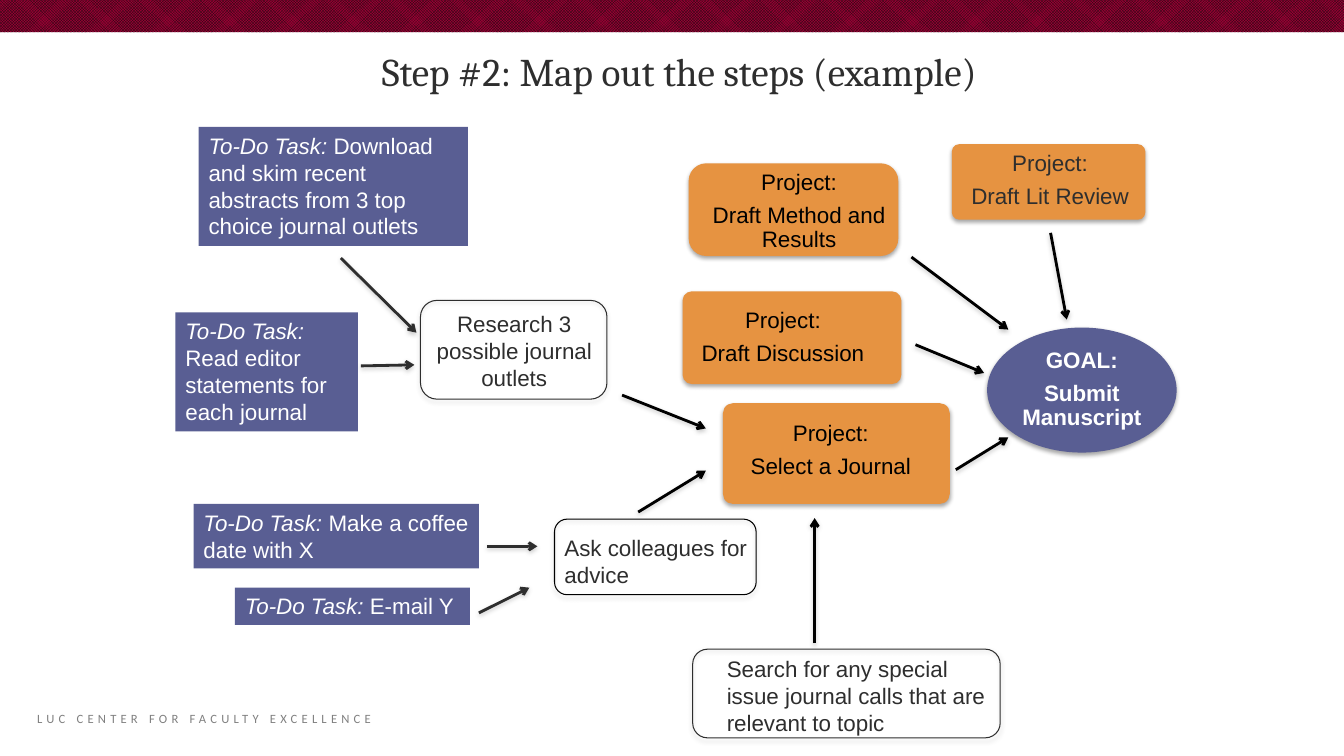
import pptx
import pptx.util
import pptx.dml.color
import pptx.enum.dml
import pptx.enum.shapes
import pptx.enum.text
import pptx.oxml
import pptx.oxml.ns

Inches, Pt = pptx.util.Inches, pptx.util.Pt
SHAPE = pptx.enum.shapes.MSO_SHAPE
ALIGN = pptx.enum.text.PP_ALIGN
ANCHOR = pptx.enum.text.MSO_ANCHOR

COLORS = {
    "ink": "2E2E2E", "black": "000000", "white": "FFFFFF", "gray": "808080",
    "project": "E69341", "task": "595E93", "check": "0D0D0D", "band": "990033",
}
CENTERED = {"alignment": ALIGN.CENTER}
STACKED = {"alignment": ALIGN.CENTER, "line_spacing": 0.9, "space_after": Pt(6.3)}


def rgb(name):
    return pptx.dml.color.RGBColor.from_string(COLORS[name])


def assign(target, values):
    for attribute, value in values.items():
        setattr(target, attribute, value)


class StepMap:
    """Draws the parts of a step map on one slide."""

    def __init__(self, slide):
        self.shapes = slide.shapes
        self.font = {"name": "Arial", "size": Pt(16)}

    def fill_text(self, frame, paragraphs, color, layout=None, font=None, inset=None,
                  anchor=ANCHOR.TOP):
        """Fill a frame; each paragraph is a list of (text, italic) runs."""
        assign(frame, {"word_wrap": True, "vertical_anchor": anchor})
        if inset is not None:
            sides = ("left", "top", "right", "bottom")
            assign(frame, {f"margin_{side}": Inches(inset) for side in sides})
        for index, runs in enumerate(paragraphs):
            paragraph = frame.add_paragraph() if index else frame.paragraphs[0]
            assign(paragraph, {"alignment": ALIGN.LEFT, **(layout or {})})
            for text, italic in runs:
                run = paragraph.add_run()
                run.text = text
                assign(run.font, {**self.font, "italic": italic, **(font or {})})
                run.font.color.rgb = rgb(color)

    def shadow(self, properties, color, alpha, distance):
        """Add a soft downward shadow; alpha in percent, distance in points."""
        effects = properties.find(pptx.oxml.ns.qn("a:effectLst"))
        if effects is not None:
            properties.remove(effects)
        properties.append(pptx.oxml.parse_xml(
            f'<a:effectLst {pptx.oxml.ns.nsdecls("a")}>'
            f'<a:outerShdw blurRad="{Pt(3.1)}" dist="{Pt(distance)}" dir="5400000" rotWithShape="0">'
            f'<a:srgbClr val="{COLORS[color]}"><a:alpha val="{alpha * 1000}"/></a:srgbClr>'
            '</a:outerShdw></a:effectLst>'))

    def shape(self, kind, place, fill=None, line=None, corner=None, shadow=None):
        shape = self.shapes.add_shape(kind, *map(Inches, place))
        shape.shadow.inherit = False
        if corner is not None:
            shape.adjustments[0] = corner
        if fill:
            shape.fill.solid()
            shape.fill.fore_color.rgb = rgb(fill)
        else:
            shape.fill.background()
        if line:
            shape.line.color.rgb = rgb(line)
            shape.line.width = Pt(0.75)
        else:
            shape.line.fill.background()
        if shadow:
            self.shadow(shape._element.spPr, shadow, 35, 1.8)
        return shape

    def text(self, place, paragraphs, color, **style):
        box = self.shapes.add_textbox(*map(Inches, place))
        self.fill_text(box.text_frame, paragraphs, color, **style)
        return box

    def project(self, place, label_place, title, color="black", corner=0.1):
        self.shape(SHAPE.ROUNDED_RECTANGLE, place, "project", corner=corner, shadow="black")
        self.text(label_place, [[("Project:", False)], [(title, False)]], color,
                  layout=STACKED, inset=0.03, anchor=ANCHOR.MIDDLE)

    def goal(self, place, lines):
        ellipse = self.shape(SHAPE.OVAL, place, "task", shadow="black")
        self.fill_text(ellipse.text_frame, [[(line, False)] for line in lines], "white",
                       layout=STACKED, font={"bold": True}, inset=0.01, anchor=ANCHOR.MIDDLE)

    def step(self, place, label_place, label, line="ink", layout=None):
        self.text(label_place, [[(label, False)]], "ink", layout=layout)
        self.shape(SHAPE.ROUNDED_RECTANGLE, place, line=line, corner=0.167, shadow="gray")

    def task(self, place, label):
        box = self.shape(SHAPE.RECTANGLE, place, "task")
        self.fill_text(box.text_frame, [[("To-Do Task: ", True), (label, False)]], "white")

    def arrow(self, start, end, color):
        arrow = self.shapes.add_connector(
            pptx.enum.shapes.MSO_CONNECTOR.STRAIGHT, *map(Inches, (*start, *end)))
        arrow.line.color.rgb = rgb(color)
        arrow.line.width = Pt(2)
        properties = arrow._element.spPr
        properties.find(pptx.oxml.ns.qn("a:ln")).append(pptx.oxml.parse_xml(
            f'<a:tailEnd {pptx.oxml.ns.nsdecls("a")} type="arrow"/>'))
        self.shadow(properties, "gray", 38, 1.6)

    def band(self, place):
        band = self.shape(SHAPE.RECTANGLE, place)
        band.fill.patterned()
        band.fill.pattern = pptx.enum.dml.MSO_PATTERN.SMALL_CHECKER_BOARD
        band.fill.fore_color.rgb = rgb("check")
        band.fill.back_color.rgb = rgb("band")

    def footer(self, place, label):
        box = self.text(place, [[(label, False)]], "gray", font={"name": "Calibri", "size": Pt(9)})
        run = box.text_frame.paragraphs[0].runs[0]
        run._r.get_or_add_rPr().set("spc", "300")


PROJECTS = [
    ((9.44, 1.43, 1.92, 0.75), (9.44, 1.47, 1.95, 0.65), "Draft Lit Review", "ink", 0.1),
    ((6.83, 1.62, 2.08, 0.92), (6.93, 1.65, 1.99, 0.9), "Draft Method and Results", "black", 0.19),
    ((6.77, 2.89, 2.17, 0.92), (6.69, 2.9, 2.15, 0.9), "Draft Discussion", "black", 0.1),
    ((7.17, 4, 2.25, 1), (7.13, 4, 2.22, 0.94), "Select a Journal", "black", 0.1),
]
STEPS = [
    ((5.5, 5.15, 2, 0.75), (5.5, 5.25, 2.17, 0.64), "Ask colleagues for advice", "black", None),
    ((4.17, 2.98, 1.85, 0.98), (4.14, 3.03, 1.92, 0.91),
     "Research 3 possible journal outlets", "ink", CENTERED),
    ((6.87, 6.44, 3.05, 0.88), (7.11, 6.45, 2.92, 0.91),
     "Search for any special issue journal calls that are relevant to topic", "ink", None),
]
TASKS = [
    ((1.97, 1.26, 2.67, 1.18),
     "Download and skim recent abstracts from 3 top choice journal outlets"),
    ((1.74, 3.1, 1.81, 1.18), "Read editor statements for each journal"),
    ((1.92, 5, 2.83, 0.64), "Make a coffee date with X"),
    ((2.33, 5.83, 2.33, 0.37), "E-mail Y"),
]
ARROWS = {
    "black": [
        ((10.42, 2.31), (10.58, 3.17)), ((9.04, 2.55), (10, 3.27)),
        ((9.48, 4.66), (10, 4.34)), ((9.08, 3.42), (9.76, 3.7)),
        ((6.17, 3.92), (7, 4.25)), ((6.33, 5.08), (7, 4.67)),
        ((8.08, 6.38), (8.08, 5.14)),
    ],
    "ink": [
        ((3.38, 2.56), (4.13, 3.3)), ((3.58, 3.63), (4.11, 3.62)),
        ((4.83, 5.42), (5.33, 5.42)), ((4.75, 6.08), (5.25, 5.83)),
    ],
}


def main():
    deck = pptx.Presentation()
    assign(deck, {"slide_width": Inches(13.33), "slide_height": Inches(7.5)})
    steps_map = StepMap(deck.slides.add_slide(deck.slide_layouts[6]))

    steps_map.band((0, 0, 13.33, 0.32))
    steps_map.text((3.22, 0.42, 7.03, 0.68), [[("Step #2: Map out the steps (example)", False)]],
                   "ink", layout=CENTERED, font={"name": "Cambria", "size": Pt(28)})
    for project in PROJECTS:
        steps_map.project(*project)
    steps_map.goal((9.79, 3.25, 1.88, 1.24), ["GOAL:", "Submit Manuscript"])
    for step in STEPS:
        steps_map.step(*step)
    for task in TASKS:
        steps_map.task(*task)
    for color, arrows in ARROWS.items():
        for start, end in arrows:
            steps_map.arrow(start, end, color)
    steps_map.footer((0.27, 7, 8.3, 0.25), "LUC CENTER FOR FACULTY EXCELLENCE")
    deck.save("out.pptx")


if __name__ == "__main__":
    main()
